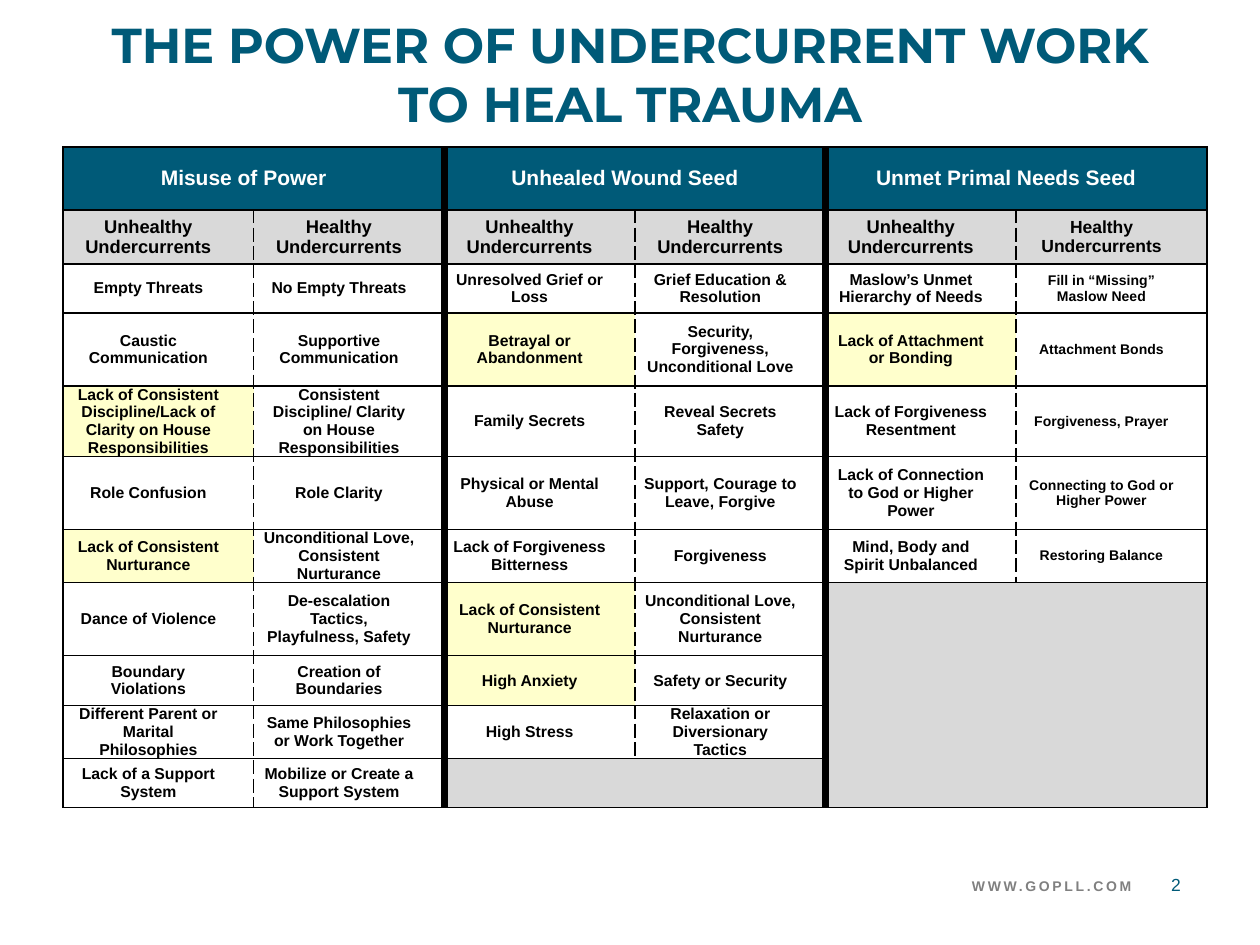
from dataclasses import dataclass
from typing import NamedTuple

import pptx
import pptx.dml.color
import pptx.enum.text
import pptx.oxml
import pptx.oxml.ns
import pptx.util

EMU_PER_PX = 914400 / 126
TEAL, GRAY, YELLOW = "005A78", "D9D9D9", "FFFFCC"
CENTER = pptx.enum.text.PP_ALIGN.CENTER
RIGHT = pptx.enum.text.PP_ALIGN.RIGHT
MIDDLE = pptx.enum.text.MSO_ANCHOR.MIDDLE


@dataclass(frozen=True)
class TextStyle:
    size: float
    color: str
    bold: bool = True
    font: str = "Arial"
    alignment: pptx.enum.text.PP_ALIGN = CENTER
    spacing: int = 0


class Box(NamedTuple):
    left: int
    top: int
    width: int
    height: int


class Edge(NamedTuple):
    points: float
    dash: str = "solid"


class MergedArea(NamedTuple):
    row: int
    column: int
    rows: int
    columns: int


THIN, DASHED, THICK = Edge(1), Edge(1, "dash"), Edge(4.5)
COLUMN_EDGES = [THIN, DASHED, THICK, DASHED, THICK, DASHED, THIN]

TABLE_BOX = Box(63, 147, 1144, 660)
ROW_HEIGHTS = [63, 54, 49, 73, 49, 73, 49, 73, 50, 49, 49]
SEED_ROW, UNDERCURRENT_ROW = 0, 1
LAST_COLUMN = 5

ROWS = [
    ["Misuse of Power", "", "Unhealed Wound Seed", "", "Unmet Primal Needs Seed", ""],
    ["Unhealthy Undercurrents", "Healthy Undercurrents"] * 3,
    ["Empty Threats", "No Empty Threats",
     "Unresolved Grief or Loss", "Grief Education & Resolution",
     "Maslow’s Unmet Hierarchy of Needs", "Fill in “Missing” Maslow Need"],
    ["Caustic Communication", "Supportive Communication",
     "Betrayal or Abandonment", "Security, Forgiveness, Unconditional Love",
     "Lack of Attachment or Bonding", "Attachment Bonds"],
    ["Lack of Consistent Discipline/Lack of Clarity on House Responsibilities",
     "Consistent Discipline/ Clarity on House Responsibilities",
     "Family Secrets", "Reveal Secrets Safety",
     "Lack of Forgiveness Resentment", "Forgiveness, Prayer"],
    ["Role Confusion", "Role Clarity",
     "Physical or Mental Abuse", "Support, Courage to Leave, Forgive",
     "Lack of Connection to God or Higher Power", "Connecting to God or Higher Power"],
    ["Lack of Consistent Nurturance", "Unconditional Love, Consistent Nurturance",
     "Lack of Forgiveness Bitterness", "Forgiveness",
     "Mind, Body and Spirit Unbalanced", "Restoring Balance"],
    ["Dance of Violence", "De-escalation Tactics, Playfulness, Safety",
     "Lack of Consistent Nurturance", "Unconditional Love, Consistent Nurturance", "", ""],
    ["Boundary Violations", "Creation of Boundaries",
     "High Anxiety", "Safety or Security", "", ""],
    ["Different Parent or Marital Philosophies", "Same Philosophies or Work Together",
     "High Stress", "Relaxation or Diversionary Tactics", "", ""],
    ["Lack of a Support System", "Mobilize or Create a Support System", "", "", "", ""],
]
HIGHLIGHTED = {
    "Betrayal or Abandonment",
    "Lack of Attachment or Bonding",
    "Lack of Consistent Discipline/Lack of Clarity on House Responsibilities",
    "Lack of Consistent Nurturance",
    "High Anxiety",
}
MERGED_AREAS = [MergedArea(SEED_ROW, column, 1, 2) for column in (0, 2, 4)] + [
    MergedArea(7, 4, 4, 2),
    MergedArea(10, 2, 1, 2),
]


def px(length: int) -> int:
    return round(length * EMU_PER_PX)


def rgb(color: str) -> pptx.dml.color.RGBColor:
    return pptx.dml.color.RGBColor.from_string(color)


def write(text_frame, text: str, style: TextStyle) -> None:
    paragraph = text_frame.paragraphs[0]
    paragraph.alignment = style.alignment
    run = paragraph.add_run()
    run.text = text
    run.font.name = style.font
    run.font.size = pptx.util.Pt(style.size)
    run.font.bold = style.bold
    run.font.color.rgb = rgb(style.color)
    if style.spacing:
        run.font._element.set("spc", str(style.spacing))


def place(shape, box: Box) -> None:
    shape.left, shape.top, shape.width, shape.height = map(px, box)


def add_title(slide, text: str) -> None:
    title = slide.shapes.title
    place(title, Box(63, 21, 1134, 105))
    title.text_frame.word_wrap = True
    title.text_frame.auto_size = pptx.enum.text.MSO_AUTO_SIZE.NONE
    title.text_frame.vertical_anchor = MIDDLE
    write(title.text_frame, text, TextStyle(28, TEAL, font="Montserrat"))


def add_label(slide, box: Box, text: str, style: TextStyle) -> None:
    text_frame = slide.shapes.add_textbox(*map(px, box)).text_frame
    text_frame.word_wrap = True
    text_frame.vertical_anchor = MIDDLE
    write(text_frame, text, style)


def set_border(cell, side: str, edge: Edge) -> None:
    """Add one cell border; side is L, R, T or B, in that order."""
    cell._tc.get_or_add_tcPr().append(pptx.oxml.parse_xml(
        f'<a:ln{side} {pptx.oxml.ns.nsdecls("a")} w="{pptx.util.Pt(edge.points)}">'
        '<a:solidFill><a:srgbClr val="000000"/></a:solidFill>'
        f'<a:prstDash val="{edge.dash}"/></a:ln{side}>'
    ))


def cell_style(row: int, column: int) -> TextStyle:
    if row == SEED_ROW:
        return TextStyle(12, "FFFFFF")
    if row == UNDERCURRENT_ROW:
        return TextStyle(10 if column == LAST_COLUMN else 10.5, "000000")
    return TextStyle(8 if column == LAST_COLUMN else 9, "000000")


def fill_cell(cell, row: int, text: str) -> None:
    if row == SEED_ROW:
        color = TEAL
    elif row == UNDERCURRENT_ROW or not text:
        color = GRAY
    elif text in HIGHLIGHTED:
        color = YELLOW
    else:
        cell.fill.background()
        return
    cell.fill.solid()
    cell.fill.fore_color.rgb = rgb(color)


def format_cell(cell, row: int, column: int, text: str) -> None:
    cell.vertical_anchor = MIDDLE
    cell.margin_left, cell.margin_right = px(9), px(29)
    cell.margin_top = cell.margin_bottom = 0
    span = cell.span_width if cell.is_merge_origin else 1
    set_border(cell, "L", COLUMN_EDGES[column])
    set_border(cell, "R", COLUMN_EDGES[column + span])
    set_border(cell, "T", THIN)
    set_border(cell, "B", THIN)
    fill_cell(cell, row, text)
    if text:
        write(cell.text_frame, text, cell_style(row, column))


def add_undercurrent_table(slide) -> None:
    frame = slide.shapes.add_table(len(ROWS), len(ROWS[0]), *map(px, TABLE_BOX))
    table = frame.table
    table.first_row = table.horz_banding = False
    for column in table.columns:
        column.width = px(TABLE_BOX.width) // len(ROWS[0])
    for row, height in zip(table.rows, ROW_HEIGHTS):
        row.height = px(height)
    for area in MERGED_AREAS:
        last = table.cell(area.row + area.rows - 1, area.column + area.columns - 1)
        table.cell(area.row, area.column).merge(last)
    for row, texts in enumerate(ROWS):
        for column, text in enumerate(texts):
            cell = table.cell(row, column)
            if not cell.is_spanned:
                format_cell(cell, row, column, text)


def main() -> None:
    presentation = pptx.Presentation()
    presentation.slide_width, presentation.slide_height = px(1260), px(945)
    slide = presentation.slides.add_slide(presentation.slide_layouts[5])
    add_title(slide, "THE POWER OF UNDERCURRENT WORK TO HEAL TRAUMA")
    add_undercurrent_table(slide)
    add_label(slide, Box(357, 869, 787, 33), "WWW.GOPLL.COM",
              TextStyle(8, "808080", alignment=RIGHT, spacing=150))
    add_label(slide, Box(1150, 861, 52, 47), "2", TextStyle(10, TEAL, bold=False))
    presentation.save("out.pptx")


if __name__ == "__main__":
    main()
